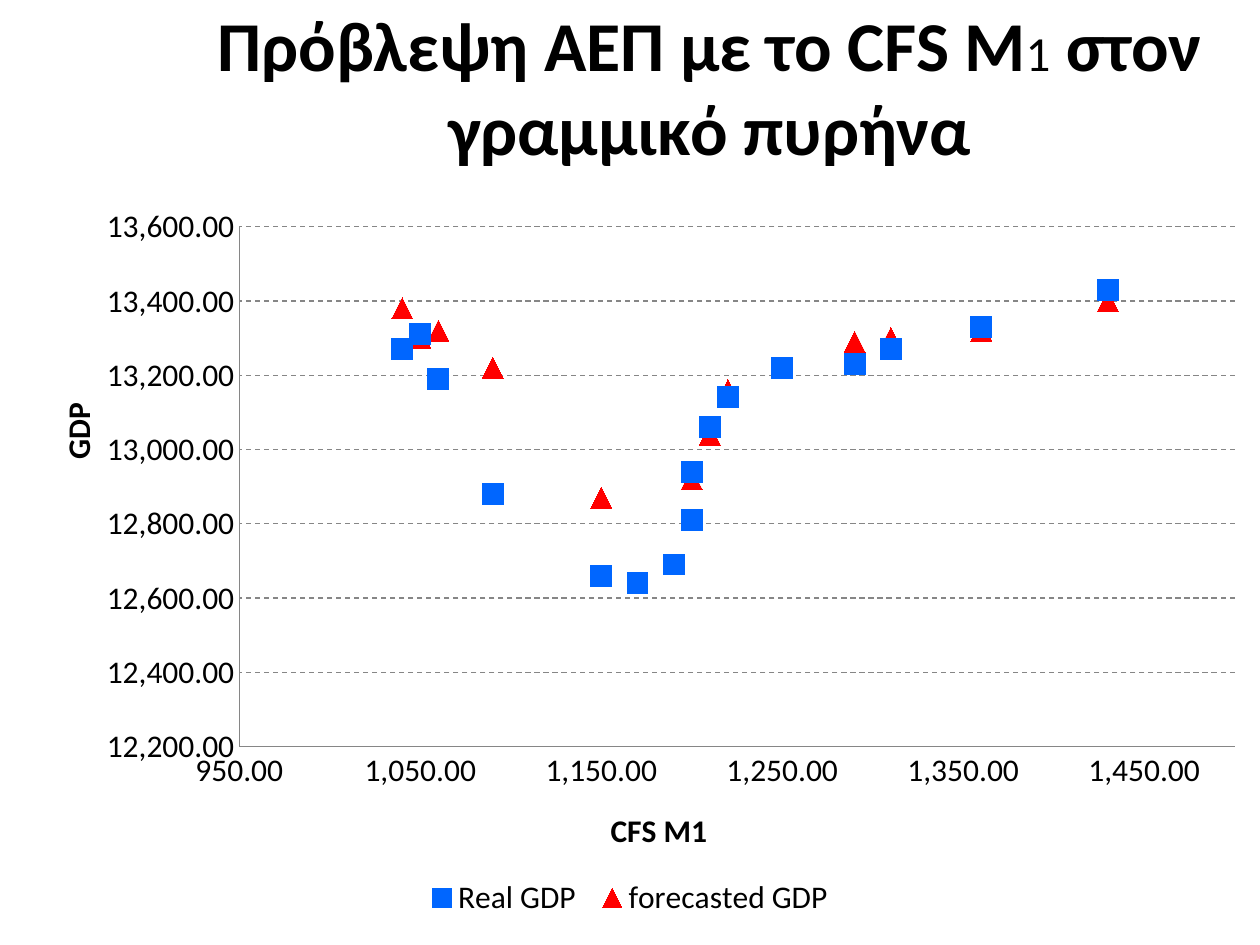
"""Build a slide with a scatter chart of real and forecasted GDP against CFS M1."""
from dataclasses import dataclass

from lxml import etree
from pptx import Presentation
from pptx import util as u
from pptx.chart import data as cd
from pptx.dml import color
from pptx.enum import chart as ch, dml
from pptx.oxml import ns


@dataclass(frozen=True)
class Theme:
    font: str = "Calibri"
    ink: str = "000000"
    grid: str = "868686"
    real: str = "0066FF"
    forecast: str = "FF0000"
    title: int = 40
    small: int = 28
    label: int = 18
    marker: int = 12


THEME = Theme()
M1 = (1040, 1050, 1060, 1090, 1150, 1170, 1190, 1200,
      1200, 1210, 1220, 1250, 1290, 1310, 1360, 1430)
SERIES = (
    ("Real GDP", THEME.real, ch.XL_MARKER_STYLE.SQUARE,
     (13270, 13310, 13190, 12880, 12660, 12640, 12690, 12810,
      12940, 13060, 13140, 13220, 13230, 13270, 13330, 13430)),
    ("forecasted GDP", THEME.forecast, ch.XL_MARKER_STYLE.TRIANGLE,
     (13380, 13300, 13320, 13220, 12870, 12640, 12690, 12810,
      12920, 13040, 13160, 13220, 13290, 13300, 13320, 13400)),
)


def set_attrs(obj, **values):
    for name, value in values.items():
        setattr(obj, name, value)


def set_font(font, size, bold=False):
    set_attrs(font, name=THEME.font, size=u.Pt(size), bold=bold)
    font.color.rgb = color.RGBColor.from_string(THEME.ink)


def set_line(line, dash=None):
    line.color.rgb = color.RGBColor.from_string(THEME.grid)
    set_attrs(line, width=u.Pt(0.75), dash_style=dash)


def place(element, **values):
    """Give a chart part a manual layout in fractions of the chart."""
    for old in element.findall(ns.qn("c:layout")):
        element.remove(old)
    layout = etree.Element(ns.qn("c:layout"))
    manual = etree.SubElement(layout, ns.qn("c:manualLayout"))
    for tag, value in values.items():
        etree.SubElement(manual, ns.qn(f"c:{tag}")).set("val", str(value))
    leading = [ns.qn("c:tx"), ns.qn("c:legendPos")]
    element.insert(sum(child.tag in leading for child in element), layout)


def add_title(owner, runs, x, y):
    """Write bold or plain runs of (text, size, bold) as a placed title."""
    owner.has_title = True
    title = owner.chart_title if hasattr(owner, "chart_title") else owner.axis_title
    p = title.text_frame.paragraphs[0]
    for words, size, bold in runs:
        r = p.add_run()
        r.text = words
        set_font(r.font, size, bold)
    place(title._element, xMode="edge", yMode="edge", x=x, y=y)


def format_axis(axis, name, spot, low, high, step):
    set_attrs(axis, minimum_scale=low, maximum_scale=high, major_unit=step,
              major_tick_mark=ch.XL_TICK_MARK.NONE,
              minor_tick_mark=ch.XL_TICK_MARK.NONE)
    set_attrs(axis.tick_labels, number_format="#,##0.00", number_format_is_linked=False)
    set_font(axis.tick_labels.font, THEME.label)
    set_line(axis.format.line)
    add_title(axis, [(name, THEME.label, True)], *spot)


def format_series(series, rgb, style):
    series.format.line.fill.background()
    set_attrs(series, smooth=False)
    set_attrs(series.marker, style=style, size=THEME.marker)
    fmt = series.marker.format
    fmt.fill.solid()
    fmt.fill.fore_color.rgb = color.RGBColor.from_string(rgb)
    fmt.line.fill.background()


def add_scatter(s, width, height):
    data = cd.XyChartData(number_format="#,##0.00")
    for name, _, _, values in SERIES:
        series = data.add_series(name)
        for x, y in zip(M1, values):
            series.add_data_point(x, y)
    chart = s.shapes.add_chart(ch.XL_CHART_TYPE.XY_SCATTER, 0, 0, width, height, data).chart
    set_font(chart.font, THEME.label)
    chart.plots[0].vary_by_categories = False
    for series, (_, rgb, style, _) in zip(chart.plots[0].series, SERIES):
        format_series(series, rgb, style)
    return chart


def add_legend(chart):
    chart.has_legend = True
    set_attrs(chart.legend, position=ch.XL_LEGEND_POSITION.BOTTOM, include_in_layout=False)
    set_font(chart.legend.font, THEME.label)
    place(chart.legend._element, xMode="edge", yMode="edge", x=0.33, y=0.92, w=0.34, h=0.06)


def main():
    prs = Presentation()
    set_attrs(prs, slide_width=u.Inches(10), slide_height=u.Inches(7.5))
    s = prs.slides.add_slide(prs.slide_layouts[6])
    chart = add_scatter(s, prs.slide_width, prs.slide_height)
    add_title(chart, [("Πρόβλεψη ΑΕΠ με το CFS M", THEME.title, True),
                      ("1", THEME.small, False),
                      (" στον γραμμικό πυρήνα", THEME.title, True)], 0.17, 0)
    x_axis, y_axis = chart.category_axis, chart.value_axis
    format_axis(x_axis, "CFS M1", (0.48, 0.85), 950, 1500, 100)
    format_axis(y_axis, "GDP", (0.04, 0.42), 12200, 13600, 200)
    x_axis.has_major_gridlines = False
    y_axis.has_major_gridlines = True
    set_line(y_axis.major_gridlines.format.line, dml.MSO_LINE.DASH)
    plot_area = chart._chartSpace.chart.plotArea
    place(plot_area, layoutTarget="inner", xMode="edge", yMode="edge",
          x=0.19, y=0.24, w=0.79, h=0.55)
    add_legend(chart)
    prs.save("out.pptx")


if __name__ == "__main__":
    main()
